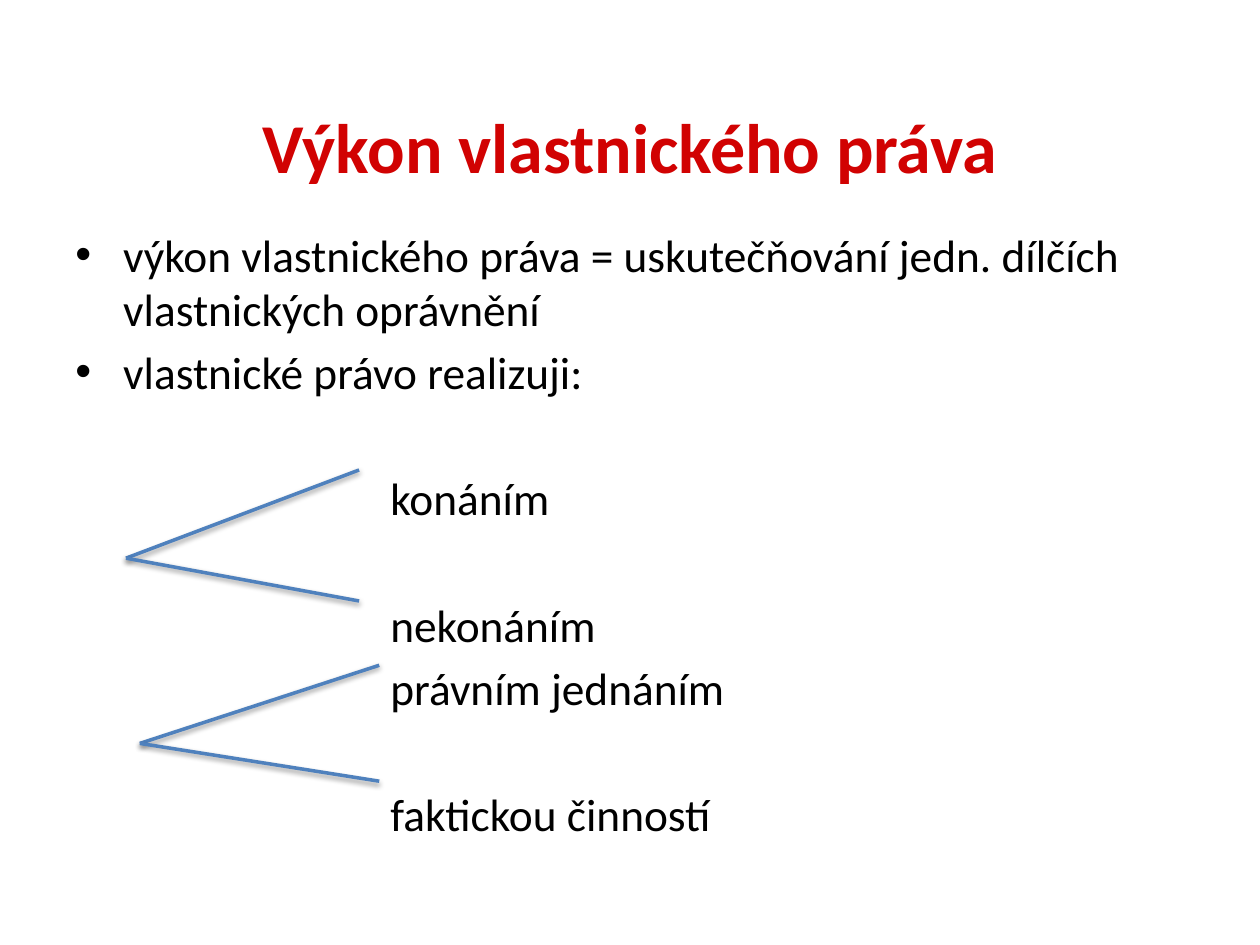
from lxml.etree import SubElement
from pptx import Presentation
from pptx.dml.color import RGBColor
from pptx.enum.shapes import MSO_CONNECTOR
from pptx.enum.text import MSO_ANCHOR, PP_ALIGN
from pptx.oxml.ns import qn
from pptx.util import Inches, Pt

COLORS = {"title": "D10202", "text": "000000", "line": "4F81BD", "shadow": "000000"}
BODY_SIZE = 25.9
PARA_GAP = 4.8
BLANK_LINE = 36.4  # height of one skipped line, in points

BULLETS = [
    "výkon vlastnického práva = uskutečňování jedn. dílčích vlastnických oprávnění",
    "vlastnické právo realizuji:",
]
# text, whether a line is skipped above it
BRANCHES = [
    ("konáním", True),
    ("nekonáním", True),
    ("právním jednáním", False),
    ("faktickou činností", True),
]
# start of each fork and the ends of its two arms
FORKS = [
    ((1, 4.43), [(2.85, 3.73), (2.85, 4.77)]),
    ((1.11, 5.9), [(3.01, 5.28), (3.01, 6.2)]),
]


def write(para, text, size=BODY_SIZE, color="text", bold=False,
          align=PP_ALIGN.LEFT, before=0):
    para.alignment = align
    para.space_before = Pt(before)
    span = para.add_run()
    span.text = text
    span.font.name = "Calibri"
    span.font.size = Pt(size)
    span.font.bold = bold
    span.font.color.rgb = RGBColor.from_string(COLORS[color])


def indent(para, left, first=0, bullet=None):
    """Set the left and first-line indents, with a bullet if one is given."""
    properties = para._p.get_or_add_pPr()
    properties.set("marL", str(Inches(left)))
    properties.set("indent", str(Inches(first)))
    if bullet:
        SubElement(properties, qn("a:buFont"), typeface="Arial")
        SubElement(properties, qn("a:buChar"), char=bullet)


def add_title(page, text):
    title = page.shapes.title
    title.left, title.top = Inches(0.5), Inches(0.76)
    title.width, title.height = Inches(9), Inches(0.79)
    title.text_frame.vertical_anchor = MSO_ANCHOR.MIDDLE
    write(title.text_frame.paragraphs[0], text, size=40, color="title",
          bold=True, align=PP_ALIGN.CENTER)


def add_body(page):
    box = page.shapes.add_textbox(Inches(0.5), Inches(1.75), Inches(9), Inches(4.95))
    frame = box.text_frame
    frame.word_wrap = True
    for number, text in enumerate(BULLETS):
        para = frame.add_paragraph() if number else frame.paragraphs[0]
        write(para, text, before=PARA_GAP)
        indent(para, 0.38, -0.38, bullet="•")
    for text, skips_line in BRANCHES:
        para = frame.add_paragraph()
        write(para, text, before=PARA_GAP + BLANK_LINE * skips_line)
        indent(para, 2.5)


def add_line(page, start, end):
    line = page.shapes.add_connector(
        MSO_CONNECTOR.STRAIGHT, *(Inches(value) for value in (*start, *end)))
    line.line.color.rgb = RGBColor.from_string(COLORS["line"])
    line.line.width = Pt(2)
    effects = SubElement(line._element.spPr, qn("a:effectLst"))
    shadow = SubElement(effects, qn("a:outerShdw"), blurRad=str(Pt(3.1)),
                        dist=str(Pt(1.6)), dir="5400000", rotWithShape="0")
    color = SubElement(shadow, qn("a:srgbClr"), val=COLORS["shadow"])
    SubElement(color, qn("a:alpha"), val="38000")


def main():
    deck = Presentation()
    deck.slide_width, deck.slide_height = Inches(10), Inches(7.5)
    page = deck.slides.add_slide(deck.slide_layouts[5])
    add_title(page, "Výkon vlastnického práva")
    add_body(page)
    for start, ends in FORKS:
        for end in ends:
            add_line(page, start, end)
    deck.save("out.pptx")


if __name__ == "__main__":
    main()
